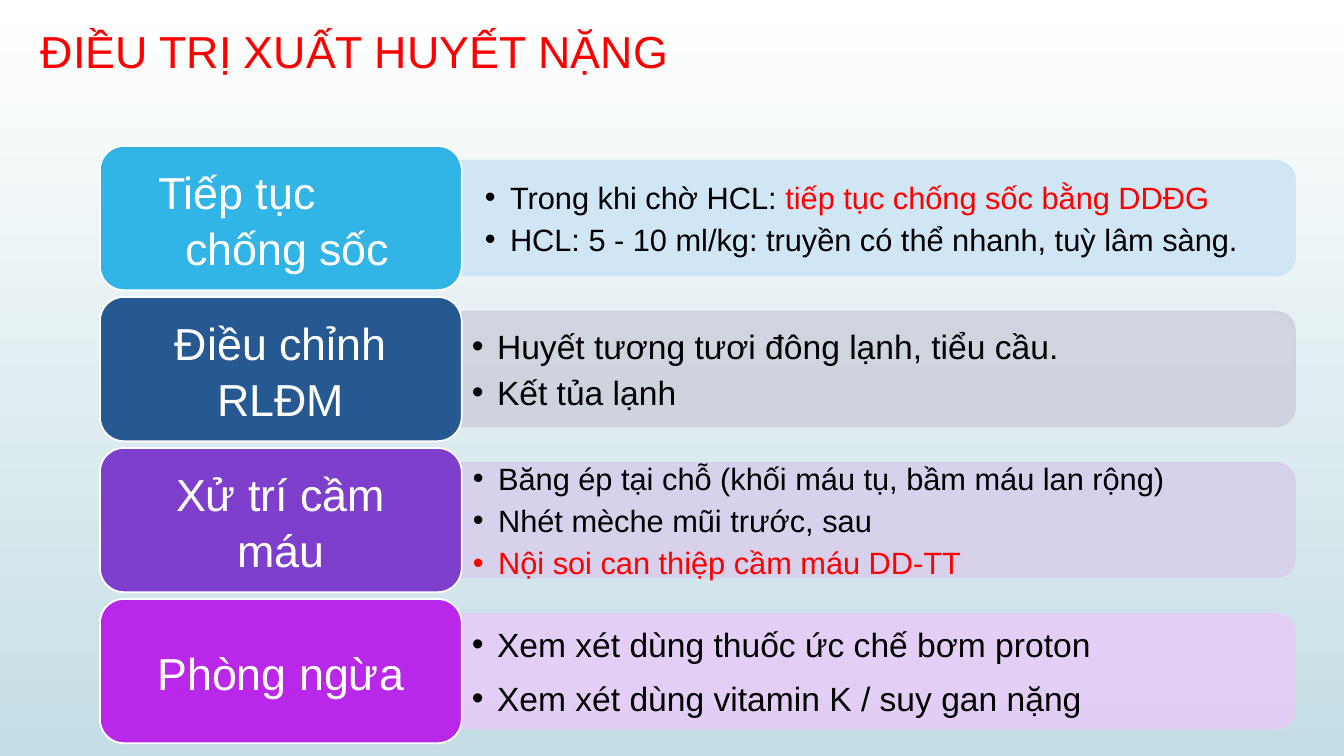
from pptx import Presentation
from pptx.dml.color import RGBColor
from pptx.enum.shapes import MSO_SHAPE
from pptx.enum.text import MSO_ANCHOR, MSO_AUTO_SIZE, PP_ALIGN
from pptx.oxml.ns import qn
from pptx.util import Pt
from lxml import etree

LABEL_SHAPE = MSO_SHAPE.ROUNDED_RECTANGLE
PANEL_SHAPE = MSO_SHAPE.ROUND_2_SAME_RECTANGLE
MIDDLE = MSO_ANCHOR.MIDDLE
NO_AUTOFIT = MSO_AUTO_SIZE.NONE
LEFT, CENTER = PP_ALIGN.LEFT, PP_ALIGN.CENTER

RED, BLACK, WHITE = "FF0000", "000000", "FFFFFF"
COMPARISON_LAYOUT = 4
FIRST_MIDDLE, ROW_PITCH = 155.8, 107.85
LABEL_LEFT, LABEL_WIDTH, LABEL_HEIGHT = 71.4, 258.4, 103
PANEL_LEFT, PANEL_WIDTH, PANEL_HEIGHT = 329.8, 595.2, 82
LIST_WIDTH, LIST_HEIGHT = 592, 74
LINE_HEIGHT = 1.15

ROWS = [
    dict(label="Tiếp tục chống sốc", color="31B4E6", tint="CEE5F5",
         size=22, gap=0.15, insets=(16.5, 8), hanging=(41.4, -19.3),
         items=[[("Trong khi chờ HCL: ", BLACK),
                 ("tiếp tục chống sốc bằng DDĐG", RED)],
                [("HCL: 5 - 10 ml/kg: truyền có thể nhanh, tuỳ lâm sàng.", BLACK)]]),
    dict(label="Điều chỉnh RLĐM", color="265991", tint="CDD1DC",
         size=24, gap=0.15, insets=(7.2, 3.6),
         items=[[("Huyết tương tươi đông lạnh, tiểu cầu.", BLACK)],
                [("Kết tủa lạnh", BLACK)]]),
    dict(label="Xử trí cầm máu", color="7E40CC", tint="D8CFEC",
         size=22, gap=0.15, insets=(8, 3.6),
         items=[[("Băng ép tại chỗ (khối máu tụ, bầm máu lan rộng)", BLACK)],
                [("Nhét mèche mũi trước, sau", BLACK)],
                [("Nội soi can thiệp cầm máu DD-TT", RED)]]),
    dict(label="Phòng ngừa", color="B927E9", tint="E6CDF7",
         size=24, gap=0.35, insets=(7.2, 3.6),
         items=[[("Xem xét dùng thuốc ức chế bơm proton", BLACK)],
                [("Xem xét dùng vitamin K / suy gan nặng", BLACK)]]),
]


def rgb(value):
    return RGBColor.from_string(value)


def write(para, text, size=32, color=WHITE, font="Arial"):
    span = para.add_run()
    span.text = text
    span.font.size = Pt(size)
    span.font.name = font
    span.font.bold = False
    span.font.color.rgb = rgb(color)


def place(box, left, top, width, height):
    box.left, box.top = Pt(left), Pt(top)
    box.width, box.height = Pt(width), Pt(height)


def indent(para, left, first):
    properties = para._p.get_or_add_pPr()
    properties.set("marL", str(Pt(left)))
    properties.set("indent", str(Pt(first)))
    return properties


def prepare(frame, left, top, right, bottom):
    frame.word_wrap = True
    frame.auto_size = NO_AUTOFIT
    frame.vertical_anchor = MIDDLE
    frame.margin_left, frame.margin_top = Pt(left), Pt(top)
    frame.margin_right, frame.margin_bottom = Pt(right), Pt(bottom)


class TreatmentSlide:
    def __init__(self, deck):
        self.page = deck.slides.add_slide(deck.slide_layouts[COMPARISON_LAYOUT])
        self.lists = [box for box in self.page.placeholders
                      if box.placeholder_format.idx in range(1, 5)]

    def background(self, *colors):
        fill = self.page.background.fill
        fill.gradient()
        fill.gradient_angle = 270
        for stop, color in zip(fill.gradient_stops, colors):
            stop.color.rgb = rgb(color)

    def title(self, text):
        box = self.page.shapes.title
        place(box, 13, 10, 810, 60)
        prepare(box.text_frame, 7.2, 3.6, 7.2, 12)
        para = box.text_frame.paragraphs[0]
        para.alignment = LEFT
        write(para, text, color=RED)

    def shape(self, kind, color, line, bounds):
        box = self.page.shapes.add_shape(kind, *map(Pt, bounds))
        box.shadow.inherit = False
        box.fill.solid()
        box.fill.fore_color.rgb = rgb(color)
        box.line.color.rgb = rgb(line)
        box.line.width = Pt(1.25)
        return box

    def panel(self, middle, color):
        left = PANEL_LEFT + (PANEL_WIDTH - PANEL_HEIGHT) / 2
        box = self.shape(PANEL_SHAPE, color, color,
                         (left, middle - PANEL_WIDTH / 2, PANEL_HEIGHT, PANEL_WIDTH))
        box.rotation = 90
        for tone in box.element.spPr.iter(qn("a:srgbClr")):
            etree.SubElement(tone, qn("a:alpha")).set("val", "90000")

    def bullets(self, box, middle, items, size, gap, insets):
        box.element.getparent().append(box.element)
        place(box, PANEL_LEFT, middle - LIST_HEIGHT / 2, LIST_WIDTH, LIST_HEIGHT)
        frame = box.text_frame
        prepare(frame, *insets, *insets)
        for number, item in enumerate(items):
            para = frame.add_paragraph() if number else frame.paragraphs[0]
            para.level = 1
            para.alignment = LEFT
            para.space_before = Pt(0)
            para.space_after = Pt(round(size * LINE_HEIGHT * gap, 1))
            properties = indent(para, 18, -18)
            etree.SubElement(properties, qn("a:buFont")).set("typeface", "Arial")
            etree.SubElement(properties, qn("a:buChar")).set("char", "•")
            for text, color in item:
                write(para, text, size=size, color=color)

    def label(self, middle, text, color, hanging=None):
        box = self.shape(LABEL_SHAPE, color, WHITE,
                         (LABEL_LEFT, middle - LABEL_HEIGHT / 2, LABEL_WIDTH, LABEL_HEIGHT))
        prepare(box.text_frame, 14.4, 10, 14.4, 10)
        para = box.text_frame.paragraphs[0]
        para.alignment = LEFT if hanging else CENTER
        para.line_spacing = 1.05
        if hanging:
            indent(para, *hanging)
        write(para, text)


def main():
    deck = Presentation()
    deck.slide_width, deck.slide_height = Pt(960), Pt(540)
    slide = TreatmentSlide(deck)
    slide.background("FFFFFF", "C5DEE5")
    slide.title(" ĐIỀU TRỊ XUẤT HUYẾT NẶNG")
    for number, (row, box) in enumerate(zip(ROWS, slide.lists)):
        middle = FIRST_MIDDLE + number * ROW_PITCH
        slide.panel(middle, row["tint"])
        slide.bullets(box, middle, row["items"], row["size"], row["gap"], row["insets"])
        slide.label(middle, row["label"], row["color"], row.get("hanging"))
    deck.save("out.pptx")


if __name__ == "__main__":
    main()
